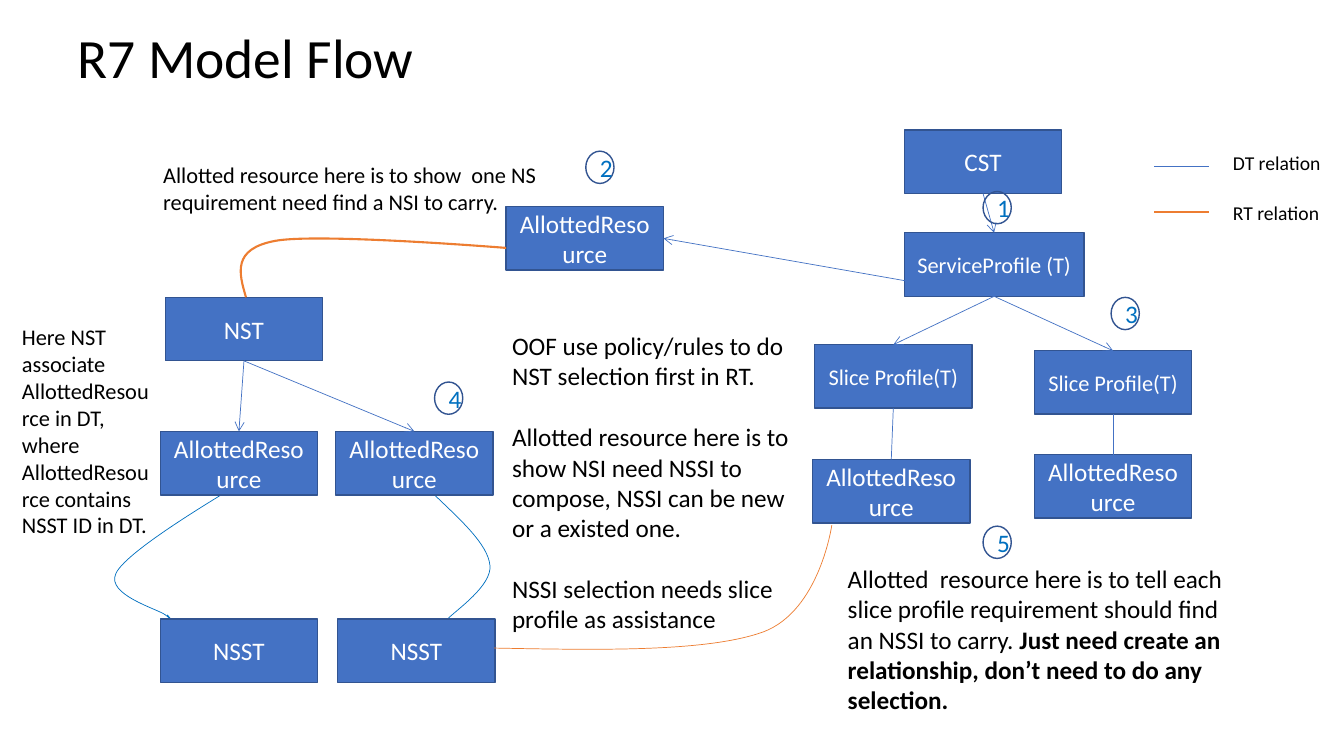
from dataclasses import dataclass
from typing import Any

from lxml.etree import SubElement
from pptx import Presentation
from pptx.dml.color import RGBColor
from pptx.enum.shapes import MSO_CONNECTOR, MSO_SHAPE
from pptx.enum.text import MSO_ANCHOR, MSO_AUTO_SIZE, PP_ALIGN
from pptx.oxml.ns import qn
from pptx.util import Pt

PX = 9144
FONT = "Calibri"
TOP, LEFT, BOTTOM, RIGHT = range(4)
ALLOTTED = "AllottedResource"
COLORS = {
    "node": "4472C4",
    "border": "325491",
    "design": "4472C4",
    "runtime": "ED7D31",
    "accent": "0070C0",
    "text": "000000",
    "light": "FFFFFF",
}


def color(name):
    return RGBColor.from_string(COLORS[name])


def set_line(line, name, width):
    line.color.rgb = color(name)
    line.width = Pt(width)


def set_font(paragraph, size, name):
    paragraph.font.name = FONT
    paragraph.font.size = Pt(size)
    paragraph.font.color.rgb = color(name)


@dataclass
class Region:
    slide: Any
    left: int
    top: int

    def place(self, left, top, width, height):
        return [PX * n for n in (self.left + left, self.top + top, width, height)]

    def label(self, kind, box, text, size, text_color):
        shape = self.slide.shapes.add_shape(kind, *self.place(*box))
        shape.shadow.inherit = False
        set_line(shape.line, "border", 1)
        shape.text_frame.vertical_anchor = MSO_ANCHOR.MIDDLE
        paragraph = shape.text_frame.paragraphs[0]
        paragraph.text = text
        paragraph.alignment = PP_ALIGN.CENTER
        set_font(paragraph, size, text_color)
        return shape

    def node(self, left, top, text, size=18, width=156):
        shape = self.label(MSO_SHAPE.RECTANGLE, (left, top, width, 63), text, size, "light")
        shape.fill.solid()
        shape.fill.fore_color.rgb = color("node")
        return shape

    def badge(self, left, top, number):
        box = (left, top, 28, 32)
        shape = self.label(MSO_SHAPE.FLOWCHART_CONNECTOR, box, str(number), 18, "accent")
        shape.fill.background()

    def note(self, box, paragraphs, size, gap=0):
        frame = self.slide.shapes.add_textbox(*self.place(*box)).text_frame
        frame.word_wrap = True
        for index, runs in enumerate(paragraphs):
            paragraph = frame.add_paragraph() if index else frame.paragraphs[0]
            set_font(paragraph, size, "text")
            paragraph.space_before = Pt(gap if index else 0)
            for text, bold in runs:
                run = paragraph.add_run()
                run.text = text
                if bold:
                    run.font.bold = True

    def curve(self, points, name, width):
        start, *rest = [(self.left + x, self.top + y) for x, y in points]
        builder = self.slide.shapes.build_freeform(*start, scale=PX)
        builder.add_line_segments(rest, close=False)
        shape = builder.convert_to_shape()
        shape.shadow.inherit = False
        shape.fill.background()
        set_line(shape.line, name, width)
        outline = next(shape._element.iter(qn("a:path")))
        segments = outline.findall(qn("a:lnTo"))
        for index in range(0, len(segments), 3):
            bend = SubElement(outline, qn("a:cubicBezTo"))
            for segment in segments[index:index + 3]:
                bend.append(segment[0])
                outline.remove(segment)


def add_line(slide, ends, name="design", width=0.5):
    connector = slide.shapes.add_connector(MSO_CONNECTOR.STRAIGHT, *ends)
    set_line(connector.line, name, width)
    SubElement(connector._element.spPr, qn("a:effectLst"))
    return connector


def join(slide, source, target, end_side=TOP, arrow=True):
    connector = add_line(slide, (0, 0, 0, 0))
    connector.begin_connect(source, BOTTOM)
    connector.end_connect(target, end_side)
    if arrow:
        SubElement(connector.line._get_or_add_ln(), qn("a:tailEnd"), type="arrow")


def add_title(slide, left, top, width, height):
    title = slide.shapes.title
    title.left, title.top, title.width, title.height = [
        PX * n for n in (left, top, width, height)]
    frame = title.text_frame
    frame.auto_size = MSO_AUTO_SIZE.NONE
    frame.word_wrap = True
    frame.vertical_anchor = MSO_ANCHOR.MIDDLE
    paragraph = frame.paragraphs[0]
    paragraph.text = "R7 Model Flow"
    paragraph.alignment = PP_ALIGN.LEFT
    paragraph.line_spacing = 0.9
    set_font(paragraph, 39.6, "text")


def add_network_slice(slide, left, top):
    region = Region(slide, left, top)
    region.curve([(419, 341), (445, 366), (472, 390), (474, 411), (476, 431), (441, 455),
                  (432, 464), (424, 473), (423, 464), (423, 464)], "accent", 0.5)
    region.curve([(230, 340), (230, 326), (230, 326), (209, 340), (188, 353), (112, 399),
                  (103, 419), (93, 440), (144, 454), (152, 460), (161, 467), (157, 464),
                  (154, 460)], "accent", 0.5)
    requirement = region.node(490, 55, ALLOTTED)
    template = region.node(152, 145, "NST")
    for column in (147, 321):
        join(slide, template, region.node(column, 278, ALLOTTED))
    for column in (147, 323):
        region.node(column, 464, "NSST")
    region.curve([(232, 145), (225, 121), (218, 97), (261, 89), (304, 81), (490, 96),
                  (490, 96)], "runtime", 1.5)
    region.badge(569, 0, 2)
    region.badge(419, 229, 4)
    region.note((0, 166, 147, 252), [[(
        "Here NST associate AllottedResource in DT, where AllottedResource contains "
        "NSST ID in DT.", False)]], 16)
    region.note((140, 5, 399, 64), [[(
        "Allotted resource here is to show  one NS requirement need find a NSI to carry.",
        False)]], 16)
    region.note((486, 173, 299, 313), [
        [("OOF use policy/rules to do NST selection first in RT.", False)],
        [("Allotted resource here is to show NSI need NSSI to compose, NSSI can be new "
          "or a existed one.", False)],
        [("NSSI selection needs slice profile as assistance", False)]], 18, gap=22)
    region.curve([(478, 493), (583, 495), (689, 497), (745, 477), (801, 456), (813, 371),
                  (813, 371)], "runtime", 0.5)
    return requirement


def add_service_profile(slide, left, top):
    region = Region(slide, left, top)
    customer = region.node(91, 0, "CST")
    service = region.node(91, 102, "ServiceProfile (T)", 16, 178)
    join(slide, customer, service)
    for profile_box, resource_box in (((2, 213), (0, 327)), ((220, 219), (220, 322))):
        profile = region.node(*profile_box, "Slice Profile(T)", 16)
        resource = region.node(*resource_box, ALLOTTED)
        join(slide, service, profile)
        join(slide, profile, resource, arrow=False)
    region.badge(169, 61, 1)
    region.badge(296, 166, 3)
    region.badge(169, 393, 5)
    region.note((25, 425, 397, 162), [[
        ("Allotted  resource here is to tell each slice profile requirement should find "
         "an NSSI to carry. ", False),
        ("Just need create an relationship, don’t need to do any selection.", True)]], 18)
    return service


def add_legend(slide, left, top):
    region = Region(slide, left, top)
    entries = (("DT relation", 0, 20, "design", 0.5), ("RT relation", 49, 65, "runtime", 1.5))
    for text, text_top, line_top, name, width in entries:
        x, y, length, _ = region.place(0, line_top, 54, 0)
        add_line(slide, (x, y, x + length, y), name, width)
        region.note((68, text_top, 120, 34), [[(text, False)]], 14)


def main():
    presentation = Presentation()
    presentation.slide_width = 1333 * PX
    presentation.slide_height = 750 * PX
    slide = presentation.slides.add_slide(presentation.slide_layouts[5])
    add_title(slide, 67, 25, 1200, 70)
    requirement = add_network_slice(slide, 12, 150)
    service = add_service_profile(slide, 806, 129)
    join(slide, service, requirement, RIGHT)
    add_legend(slide, 1145, 145)
    presentation.save("out.pptx")


if __name__ == "__main__":
    main()
